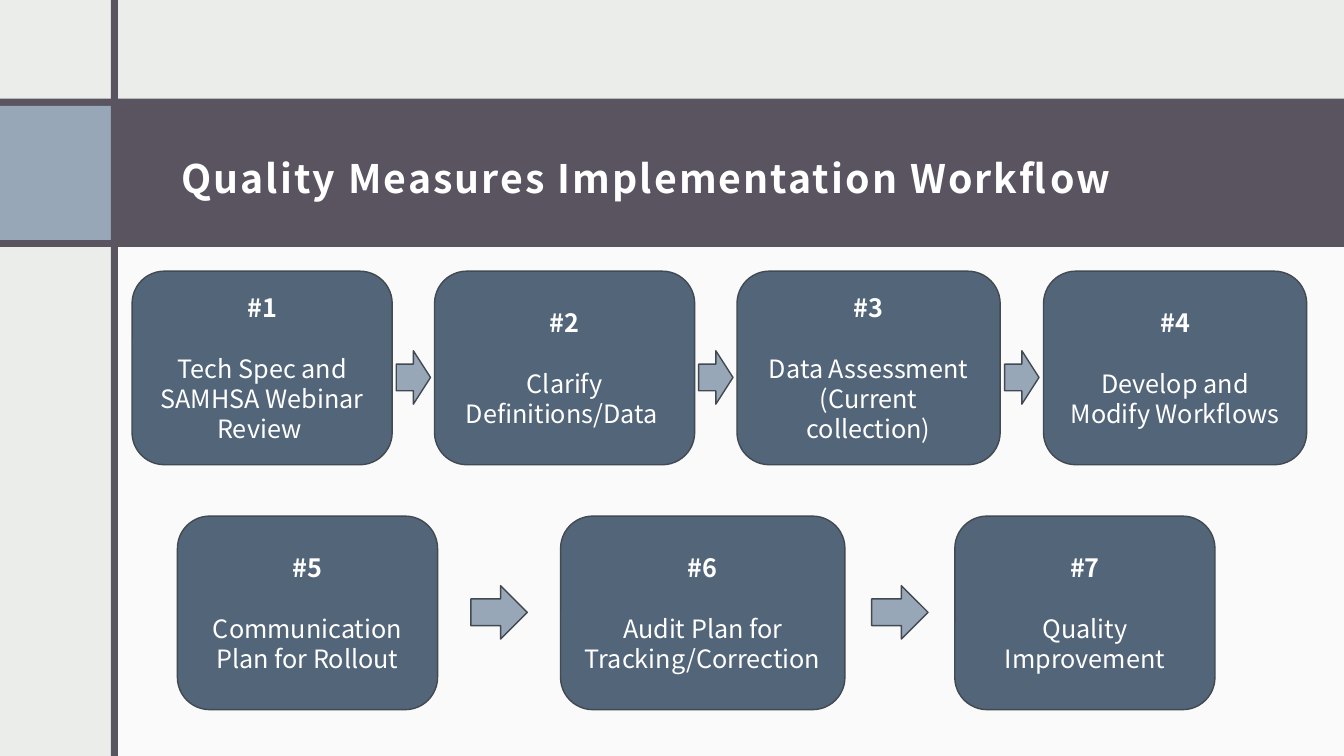
from lxml.etree import SubElement
from pptx import Presentation
from pptx.dml.color import RGBColor
from pptx.enum.shapes import MSO_SHAPE as Preset
from pptx.enum.text import MSO_ANCHOR as Anchor, MSO_AUTO_SIZE as AutoSize, PP_ALIGN as Align
from pptx.oxml.ns import qn
from pptx.util import Inches, Pt

COLORS = {"ground": "EBEDEB", "white": "FFFFFF", "plum": "595460",
          "mist": "97A7B8", "slate": "536579", "outline": "424951"}
FONT = "Noto Sans CJK JP"

deck = Presentation()
deck.slide_width, deck.slide_height = Inches(13.33), Inches(7.5)
slide = deck.slides.add_slide(deck.slide_layouts[5])
slide.background.fill.solid()
slide.background.fill.fore_color.rgb = RGBColor.from_string(COLORS["ground"])


def add_block(preset, box, fill, outlined=False):
    block = slide.shapes.add_shape(preset, *map(Inches, box))
    block.shadow.inherit = False
    block.fill.solid()
    block.fill.fore_color.rgb = RGBColor.from_string(COLORS[fill])
    if outlined:
        block.line.color.rgb = RGBColor.from_string(COLORS["outline"])
        block.line.width = Pt(1)
    else:
        block.line.fill.background()
    return block


def write(paragraph, text, size, bold):
    run = paragraph.add_run()
    run.text = text
    for attribute, value in {"name": FONT, "size": Pt(size), "bold": bold}.items():
        setattr(run.font, attribute, value)
    run.font.color.rgb = RGBColor.from_string(COLORS["white"])
    return run


# Frame: pale content panel, title band, accent square and vertical rule
panel = add_block(Preset.RECTANGLE, (1.14, 2.33, 12.2, 5.17), "white")
panel_color = panel.fill._xPr.find(qn("a:solidFill"))[0]
SubElement(panel_color, qn("a:alpha"), val="75000")
for box, fill in [((0, 0.98, 13.33, 1.47), "plum"),
                  ((0, 1.05, 1.1, 1.33), "mist"),
                  ((1.1, 0, 0.07, 7.5), "plum")]:
    add_block(Preset.RECTANGLE, box, fill)

# Title, brought in front of its band
title = slide.shapes.title
slide.shapes._spTree.append(title._element)
title.left, title.top, title.width, title.height = map(Inches, (1.68, 1.05, 11.17, 1.33))
title_format = {"auto_size": AutoSize.NONE, "word_wrap": True, "vertical_anchor": Anchor.MIDDLE,
                "margin_left": Inches(0.12), "margin_top": Inches(0.2),
                "margin_right": Inches(0.12), "margin_bottom": Inches(0.1)}
for attribute, value in title_format.items():
    setattr(title.text_frame, attribute, value)
heading = title.text_frame.paragraphs[0]
heading.alignment = Align.LEFT
heading_run = write(heading, "Quality Measures Implementation Workflow", 28, True)
heading_run.font._element.set("spc", "150")

# Workflow rows: step top, arrow top, arrow width, then (left, width, text) per step
STEP_HEIGHT, ARROW_HEIGHT = 1.92, 0.53
rows = [
    (2.69, 3.48, 0.34, [(1.31, 2.58, "Tech Spec and SAMHSA Webinar Review "),
                        (4.31, 2.58, "Clarify Definitions/Data "),
                        (7.31, 2.61, "Data Assessment (Current collection)"),
                        (10.35, 2.61, "Develop and Modify Workflows")]),
    (5.12, 5.81, 0.56, [(1.76, 2.58, "Communication Plan for Rollout"),
                        (5.56, 2.82, "Audit Plan for Tracking/Correction"),
                        (9.47, 2.58, "Quality Improvement")]),
]
number = 0
for step_top, arrow_top, arrow_width, steps in rows:
    for left, width, task in steps:
        number += 1
        step = add_block(Preset.ROUNDED_RECTANGLE, (left, step_top, width, STEP_HEIGHT),
                         "slate", outlined=True)
        frame = step.text_frame
        frame.word_wrap = True
        frame.vertical_anchor = Anchor.MIDDLE
        label, description = frame.paragraphs[0], frame.add_paragraph()
        write(label, f"#{number}", 18, True)
        write(description, task, 18, False)
        description.space_before = Pt(21.6)
        for paragraph in (label, description):
            paragraph.alignment = Align.CENTER

    # Each arrow sits in the middle of the gap between two steps
    for (left, width, _), (next_left, _, _) in zip(steps, steps[1:]):
        arrow_left = (left + width + next_left - arrow_width) / 2
        add_block(Preset.RIGHT_ARROW, (arrow_left, arrow_top, arrow_width, ARROW_HEIGHT),
                  "mist", outlined=True)

deck.save("out.pptx")
